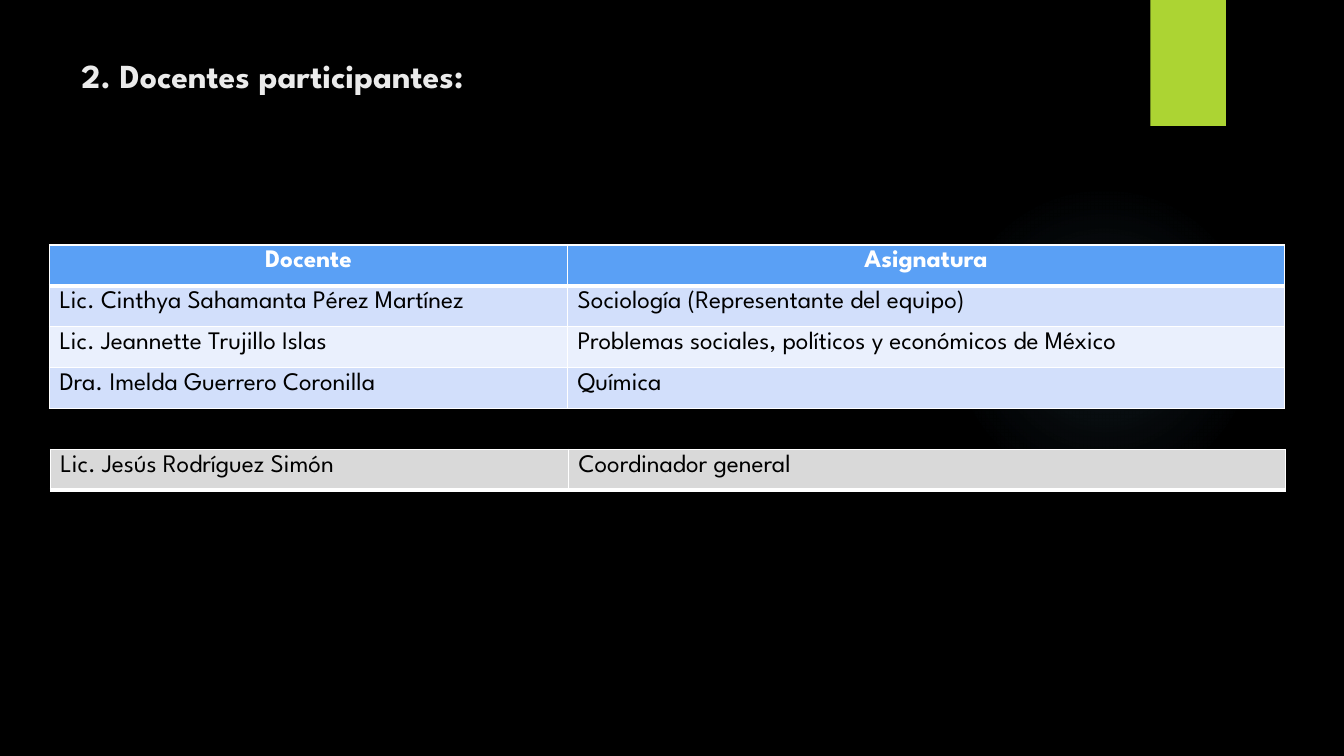
from lxml.etree import SubElement
from pptx import Presentation
from pptx.dml.color import RGBColor
from pptx.enum.shapes import MSO_SHAPE
from pptx.enum.text import MSO_ANCHOR, PP_ALIGN
from pptx.oxml.ns import qn
from pptx.util import Inches, Pt

TITLE = "2. Docentes participantes:"
TEACHERS = [
    ("Docente", "Asignatura"),
    ("Lic. Cinthya Sahamanta Pérez Martínez", "Sociología (Representante del equipo)"),
    ("Lic. Jeannette Trujillo Islas", "Problemas sociales, políticos y económicos de México"),
    ("Dra. Imelda Guerrero Coronilla", "Química"),
]
COORDINATOR = [("Lic. Jesús Rodríguez Simón", "Coordinador general")]

COLORS = {
    "background": "000000", "glow": "7AC4F0", "accent": "ACD433", "title": "EBEBEB",
    "header": "5AA0F5", "dark_band": "D2DFFB", "light_band": "EAF0FD",
    "gray": "D9D9D9", "white": "FFFFFF", "black": "000000",
}
FONT = "League Spartan"
COL_WIDTHS = (5.14, 7.11)
ROW_HEIGHT = 1.62 / len(TEACHERS)
CELL_MARGINS = {"margin_left": 0.1, "margin_right": 0.1,
                "margin_top": 0.05, "margin_bottom": 0.05}
GLOW_STOPS = [(0, 7), (36, 6), (69, 0)]  # position %, opacity %


def rgb(name):
    return RGBColor.from_string(COLORS[name])


def write(p, text, size, color, bold=False):
    r = p.add_run()
    r.text = text
    for name, value in {"name": FONT, "size": Pt(size), "bold": bold}.items():
        setattr(r.font, name, value)
    r.font.color.rgb = rgb(color)


def add_plain_shape(slide, kind, *box):
    sp = slide.shapes.add_shape(kind, *map(Inches, box))
    sp.shadow.inherit = False
    sp.line.fill.background()
    return sp


def set_borders(cell, widths):
    tc_pr = cell._tc.get_or_add_tcPr()
    for i, (side, width) in enumerate(widths.items()):
        ln = SubElement(tc_pr, qn("a:ln" + side), w=str(Pt(width)))
        fill = SubElement(ln, qn("a:solidFill"))
        SubElement(fill, qn("a:srgbClr"), val=COLORS["white"])
        tc_pr.remove(ln)
        tc_pr.insert(i, ln)  # borders come before the cell fill


def add_table(slide, left, top, rows, fills, thick_row, header=False):
    table = slide.shapes.add_table(
        len(rows), len(COL_WIDTHS), Inches(left), Inches(top),
        Inches(sum(COL_WIDTHS)), Inches(ROW_HEIGHT * len(rows))).table
    for col, width in zip(table.columns, COL_WIDTHS):
        col.width = Inches(width)
    for i, row in enumerate(rows):
        table.rows[i].height = Inches(ROW_HEIGHT)
        is_header = header and i == 0
        for j, text in enumerate(row):
            cell = table.cell(i, j)
            for name, value in CELL_MARGINS.items():
                setattr(cell, name, Inches(value))
            cell.fill.solid()
            cell.fill.fore_color.rgb = rgb(fills[i])
            set_borders(cell, {"L": 1, "R": 1, "T": 3 if i == thick_row + 1 else 1,
                               "B": 3 if i == thick_row else 1})
            p = cell.text_frame.paragraphs[0]
            p.alignment = PP_ALIGN.CENTER if is_header else PP_ALIGN.LEFT
            write(p, text, 18, "white" if is_header else "black", is_header)


prs = Presentation()
prs.slide_width, prs.slide_height = Inches(13.33), Inches(7.5)
s = prs.slides.add_slide(prs.slide_layouts[6])
s.background.fill.solid()
s.background.fill.fore_color.rgb = rgb("background")

# Faint round glow
glow = add_plain_shape(s, MSO_SHAPE.OVAL, 9.41, 1.83, 3.08, 3.08)
glow.fill.gradient()
grad = glow._element.spPr.find(qn("a:gradFill"))
for child in list(grad):
    grad.remove(child)
stops = SubElement(grad, qn("a:gsLst"))
for pos, opacity in GLOW_STOPS:
    stop = SubElement(stops, qn("a:gs"), pos=str(pos * 1000))
    color = SubElement(stop, qn("a:srgbClr"), val=COLORS["glow"])
    SubElement(color, qn("a:alpha"), val=str(opacity * 1000))
circle = SubElement(grad, qn("a:path"), path="circle")
SubElement(circle, qn("a:fillToRect"), l="50000", t="50000", r="50000", b="50000")

# Green tab
tab = add_plain_shape(s, MSO_SHAPE.RECTANGLE, 11.41, 0, 0.75, 1.25)
tab.fill.solid()
tab.fill.fore_color.rgb = rgb("accent")

# Title
tf = s.shapes.add_textbox(Inches(0.71), Inches(0.5), Inches(10.29), Inches(1.53)).text_frame
tf.word_wrap = True
tf.vertical_anchor = MSO_ANCHOR.TOP
write(tf.paragraphs[0], TITLE, 24, "title", True)

# Teachers and coordinator
add_table(s, 0.49, 2.43, TEACHERS, ("header", "dark_band", "light_band", "dark_band"),
          thick_row=0, header=True)
add_table(s, 0.5, 4.46, COORDINATOR, ("gray",), thick_row=0)

prs.save("out.pptx")
